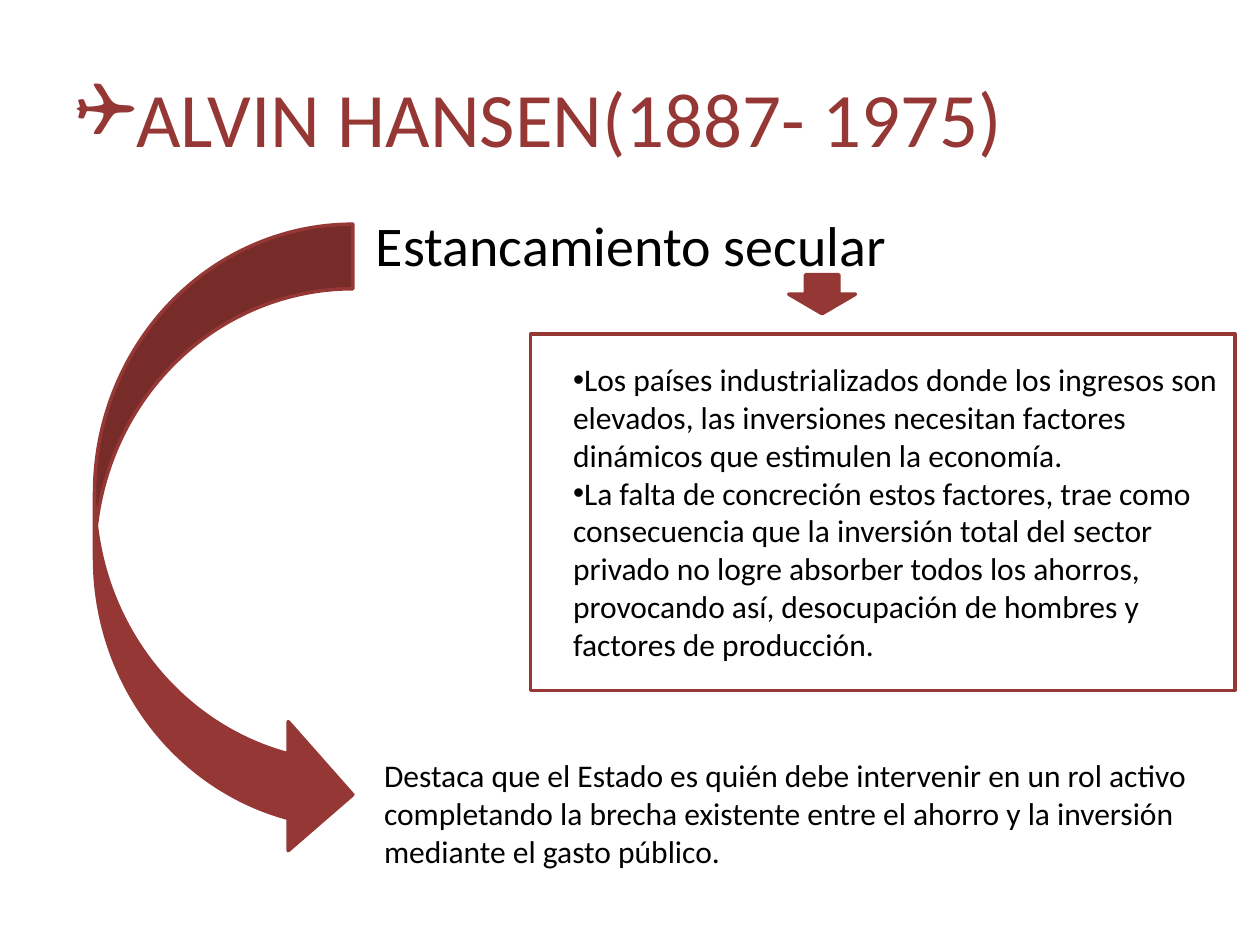
from lxml.etree import SubElement
from pptx import Presentation
from pptx.dml.color import RGBColor
from pptx.enum.shapes import MSO_SHAPE as Shape
from pptx.enum.text import MSO_ANCHOR as Anchor, PP_ALIGN as Align
from pptx.oxml.ns import qn
from pptx.util import Inches, Pt

THEME = {
    "font": "Calibri",
    "accent": RGBColor.from_string("953735"),
    "ink": RGBColor.from_string("000000"),
    "paper": RGBColor.from_string("FFFFFF"),
    "title": 44, "heading": 32, "body": 18, "line": 2,
}

FIGURES = [
    (Shape.DOWN_ARROW, (6.26, 2.18, 0.53, 0.31), "accent"),
    (Shape.RECTANGLE, (4.21, 2.65, 5.59, 2.83), "paper"),
    (Shape.CURVED_RIGHT_ARROW, (0.75, 1.78, 2.05, 5.04), "accent"),
]

PASSAGES = [
    {"at": (0.5, 0.3, 9, 1.25), "size": "title", "color": "accent",
     "bullet": "❑", "bullet_font": "Wingdings",
     "frame": {"vertical_anchor": Anchor.MIDDLE},
     "lines": ["ALVIN HANSEN(1887- 1975)"]},
    {"at": (0.51, 1.62, 9, 0.82), "size": "heading",
     "paragraph": {"alignment": Align.CENTER, "space_before": Pt(6.4)},
     "indent": 0.38,
     "lines": ["Estancamiento secular"]},
    {"at": (4.45, 2.81, 5.35, 2.91), "bullet": "•", "bullet_font": "Arial",
     "lines": [
         "Los países industrializados donde los ingresos son elevados, las "
         "inversiones necesitan factores dinámicos que estimulen la economía.",
         "La falta de concreción estos factores, trae como consecuencia que la "
         "inversión total del sector privado no logre absorber todos los ahorros, "
         "provocando así, desocupación de hombres y factores de producción."]},
    {"at": (2.95, 5.95, 6.61, 1.31),
     "lines": [
         "Destaca que el Estado es quién debe intervenir en un rol activo "
         "completando la brecha existente entre el ahorro y la inversión "
         "mediante el gasto público."]},
]


def apply(target, values):
    for name, value in values.items():
        setattr(target, name, value)


def add_figure(slide, preset, at, fill):
    figure = slide.shapes.add_shape(preset, *map(Inches, at))
    figure.shadow.inherit = False
    figure.fill.solid()
    figure.fill.fore_color.rgb = THEME[fill]
    figure.line.color.rgb = THEME["accent"]
    figure.line.width = Pt(THEME["line"])


def add_passage(slide, passage):
    frame = slide.shapes.add_textbox(*map(Inches, passage["at"])).text_frame
    apply(frame, {"word_wrap": True, **passage.get("frame", {})})
    for index, line in enumerate(passage["lines"]):
        paragraph = frame.add_paragraph() if index else frame.paragraphs[0]
        apply(paragraph, passage.get("paragraph", {}))
        properties = paragraph._p.get_or_add_pPr()
        if "indent" in passage:
            indent = Inches(passage["indent"])
            properties.set("marL", str(indent))
            properties.set("indent", str(-indent))
        if "bullet" in passage:
            SubElement(properties, qn("a:buFont"), typeface=passage["bullet_font"])
            SubElement(properties, qn("a:buChar"), char=passage["bullet"])
        run = paragraph.add_run()
        run.text = line
        apply(run.font, {"name": THEME["font"],
                         "size": Pt(THEME[passage.get("size", "body")])})
        run.font.color.rgb = THEME[passage.get("color", "ink")]


def main():
    """Build the slide on secular stagnation."""
    deck = Presentation()
    apply(deck, {"slide_width": Inches(10), "slide_height": Inches(7.5)})
    slide = deck.slides.add_slide(deck.slide_layouts[6])
    for figure in FIGURES:
        add_figure(slide, *figure)
    for passage in PASSAGES:
        add_passage(slide, passage)
    deck.save("out.pptx")


if __name__ == "__main__":
    main()
